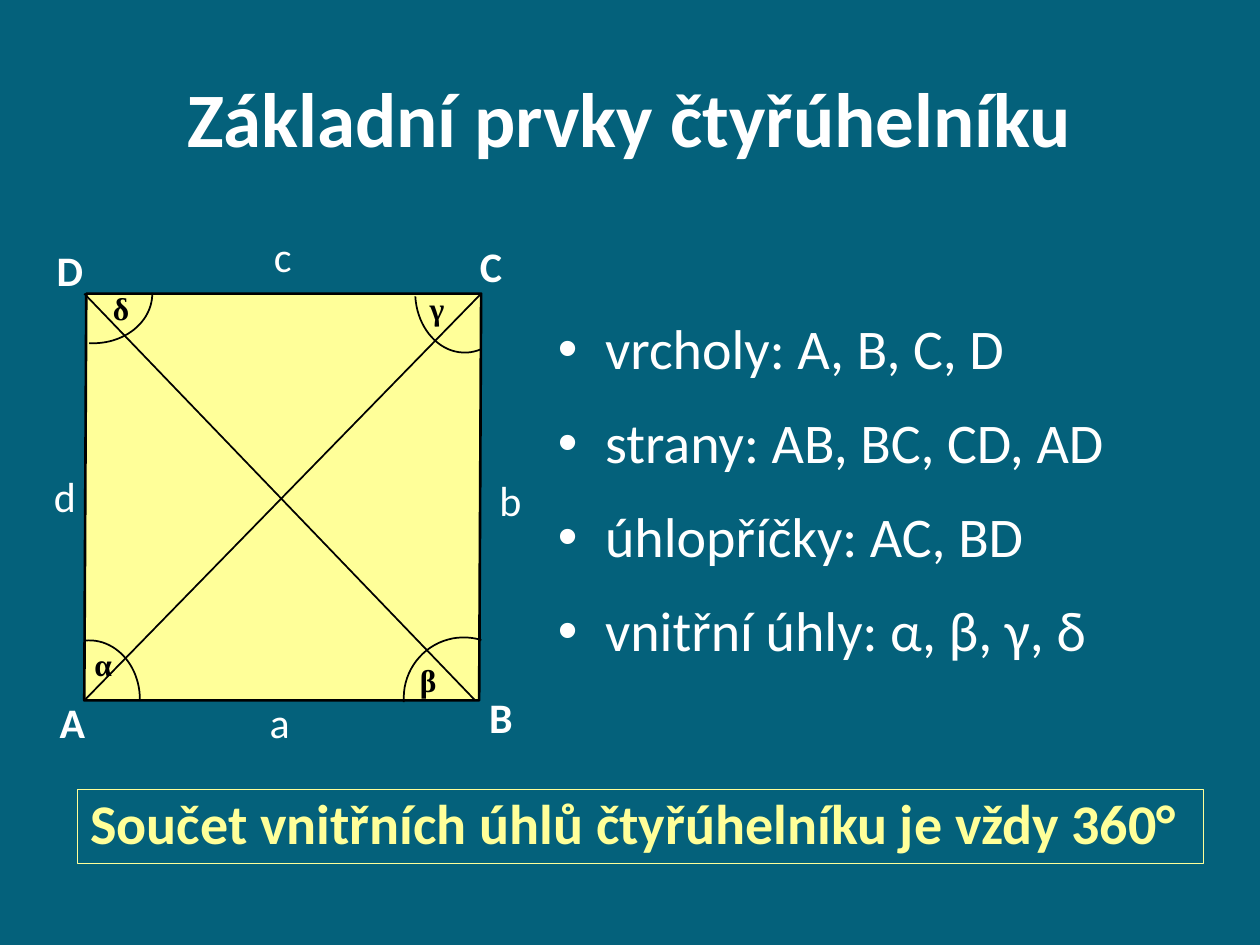
"""Build a slide on the basic parts of a quadrilateral."""
import math

from lxml import etree
from pptx import Presentation
from pptx import util as u
from pptx.dml.color import RGBColor
from pptx.enum import shapes, text
from pptx.oxml import ns

TEAL = RGBColor(0x04, 0x61, 0x7B)
CREAM = RGBColor(0xFF, 0xFF, 0x99)
WHITE = RGBColor(0xFF, 0xFF, 0xFF)
BLACK = RGBColor(0, 0, 0)
MID = text.PP_ALIGN.CENTER
KIND = shapes.MSO_SHAPE


def write(frame, *lines, size=24, font="Calibri", color=WHITE, bold=False,
          align=MID, pitch=None, gap=0):
    """Fill a text frame with one paragraph for each line."""
    frame.word_wrap = True
    for i, line in enumerate(lines):
        para = frame.add_paragraph() if i else frame.paragraphs[0]
        para.alignment = align
        para.line_spacing = pitch
        para.space_before = u.Pt(gap if i else 0)
        run = para.add_run()
        run.text = line
        run.font.size = u.Pt(size)
        run.font.name = font
        run.font.bold = bold
        run.font.color.rgb = color


def place(item, *box):
    """Move an item to left, top, width and height in centimetres."""
    item.left, item.top, item.width, item.height = map(u.Cm, box)


def label(slide, name, x, y, w, h, **form):
    """Add a short centred label."""
    item = slide.shapes.add_textbox(*map(u.Cm, (x, y, w, h)))
    write(item.text_frame, name, **form)
    item.text_frame.auto_size = text.MSO_AUTO_SIZE.SHAPE_TO_FIT_TEXT


def style(item, fill=None, line=BLACK, width=1):
    """Give a shape a flat fill and an outline."""
    item.shadow.inherit = False
    if fill is None:
        item.fill.background()
    else:
        item.fill.solid()
        item.fill.fore_color.rgb = fill
    item.line.color.rgb = line
    item.line.width = u.Pt(width)


def shape(slide, kind, *box, **look):
    """Add a preset shape."""
    item = slide.shapes.add_shape(kind, *map(u.Cm, box))
    style(item, **look)
    return item


def arc(slide, x, y, rx, ry, start, end, steps=24):
    """Draw an open angle arc round a centre, with its ends in degrees."""
    turns = [math.radians(start + (end - start) * i / steps)
             for i in range(steps + 1)]
    dots = [(u.Cm(x + rx * math.cos(t)), u.Cm(y + ry * math.sin(t)))
            for t in turns]
    pen = slide.shapes.build_freeform(*dots[0])
    pen.add_line_segments(dots[1:], close=False)
    style(pen.convert_to_shape())


def line(slide, *ends):
    """Draw a thin diagonal."""
    item = slide.shapes.add_connector(shapes.MSO_CONNECTOR.STRAIGHT,
                                      *map(u.Cm, ends))
    item.line.color.rgb = BLACK
    item.line.width = u.Pt(1)
    etree.SubElement(item._element.spPr, ns.qn("a:effectLst"))


def figure(slide):
    """Draw the quadrilateral with its diagonals, angles and labels."""
    left, top, wide, high = 1.7, 5.92, 8, 8.2
    right, base = left + wide, top + high
    body = shape(slide, KIND.PARALLELOGRAM, left, top, wide, high,
                 fill=CREAM, width=1.5)
    body.adjustments[0] = 0.005
    line(slide, left, base, right, top)
    line(slide, left, top, right - 0.12, base)

    for spot in ((1.8, 14.1, 1.02, 1.19, 265, 360),
                 (9.37, 5.89, 1, 1.22, 71, 176),
                 (1.88, 5.92, 1.19, 1, -1, 94),
                 (9.35, 14.07, 1.21, 1.22, 176, 287)):
        arc(slide, *spot)

    for name, x, y in (("A", 0.66, 13.92), ("B", 9.3, 13.81),
                       ("D", 0.61, 4.8), ("C", 9.1, 4.72)):
        label(slide, name, x, y, 1.6, 1.27, bold=True)
    for name, x, y in (("γ", 8.31, 5.71), ("α", 1.58, 12.88),
                       ("δ", 1.94, 5.71), ("β", 8.13, 13.21)):
        label(slide, name, x, y, 1, 1.02, size=18, font="Times New Roman",
              color=BLACK, bold=True)
    for name, x, y in (("a", 4.94, 13.92), ("b", 9.59, 9.45),
                       ("c", 5, 4.52), ("d", 0.61, 9.36)):
        label(slide, name, x, y, 1.4, 1.27)


def main():
    """Build and save the slide."""
    deck = Presentation()
    deck.slide_width, deck.slide_height = u.Cm(25.4), u.Cm(19.05)
    slide = deck.slides.add_slide(deck.slide_layouts[1])
    slide.background.fill.solid()
    slide.background.fill.fore_color.rgb = TEAL

    title, body = slide.placeholders
    place(title, 1.27, 0.76, 22.86, 3.18)
    write(title.text_frame, "Základní prvky čtyřúhelníku", size=44, bold=True)

    place(body, 10.99, 5.69, 13.79, 8.74)
    frame = body.text_frame
    frame.auto_size = text.MSO_AUTO_SIZE.NONE
    frame.margin_top = u.Cm(0.78)
    write(frame, "vrcholy: A, B, C, D", "strany: AB, BC, CD, AD",
          "úhlopříčky: AC, BD", "vnitřní úhly: α, β, γ, δ",
          size=32, align=text.PP_ALIGN.LEFT, pitch=0.9, gap=19.2)

    figure(slide)

    rule = shape(slide, KIND.RECTANGLE, 1.57, 15.91, 22.7, 1.5,
                 line=CREAM, width=0.75)
    write(rule.text_frame, "Součet vnitřních úhlů čtyřúhelníku je vždy 360°",
          size=32, color=CREAM, bold=True, align=text.PP_ALIGN.LEFT, pitch=0.9)
    deck.save("out.pptx")


if __name__ == "__main__":
    main()
